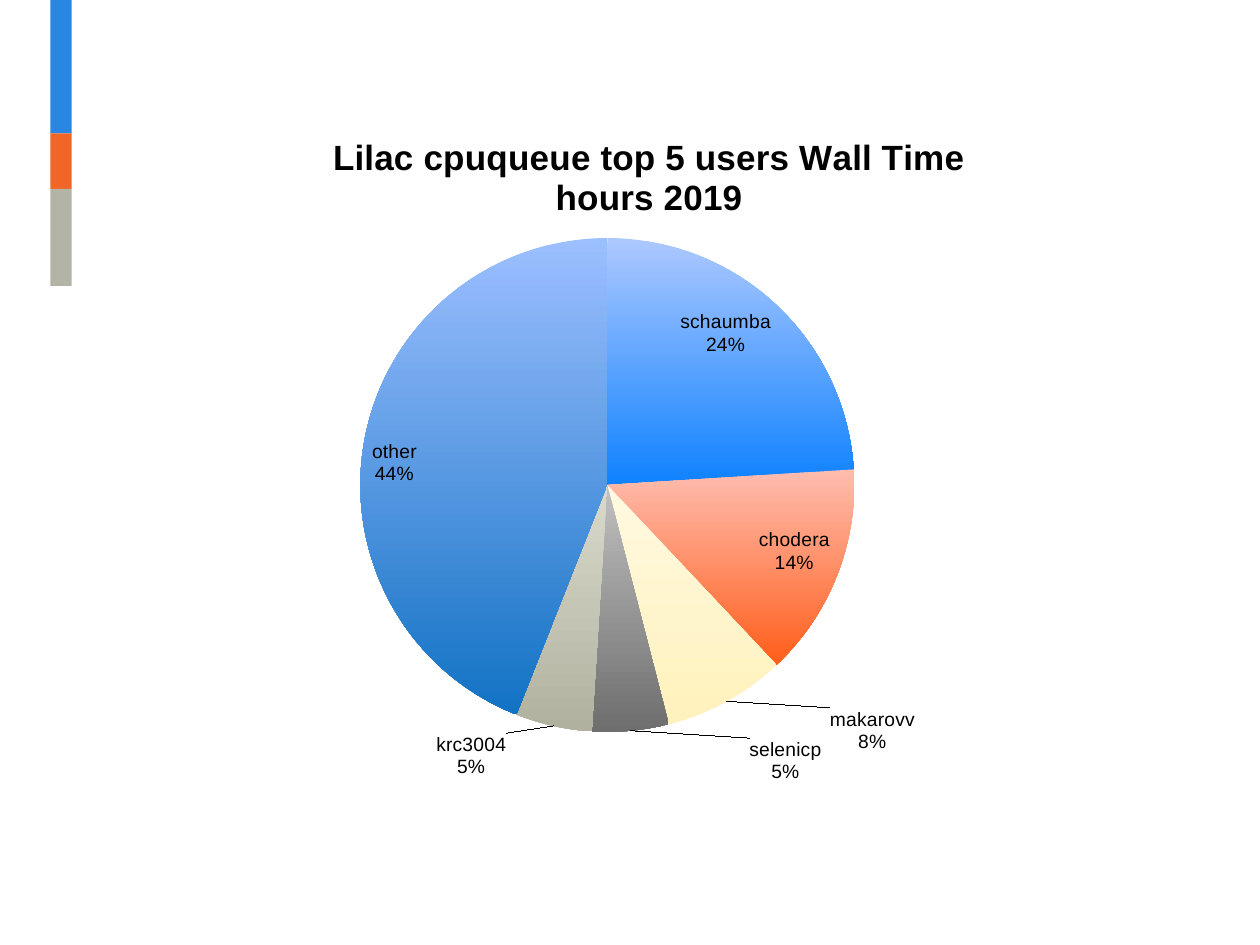
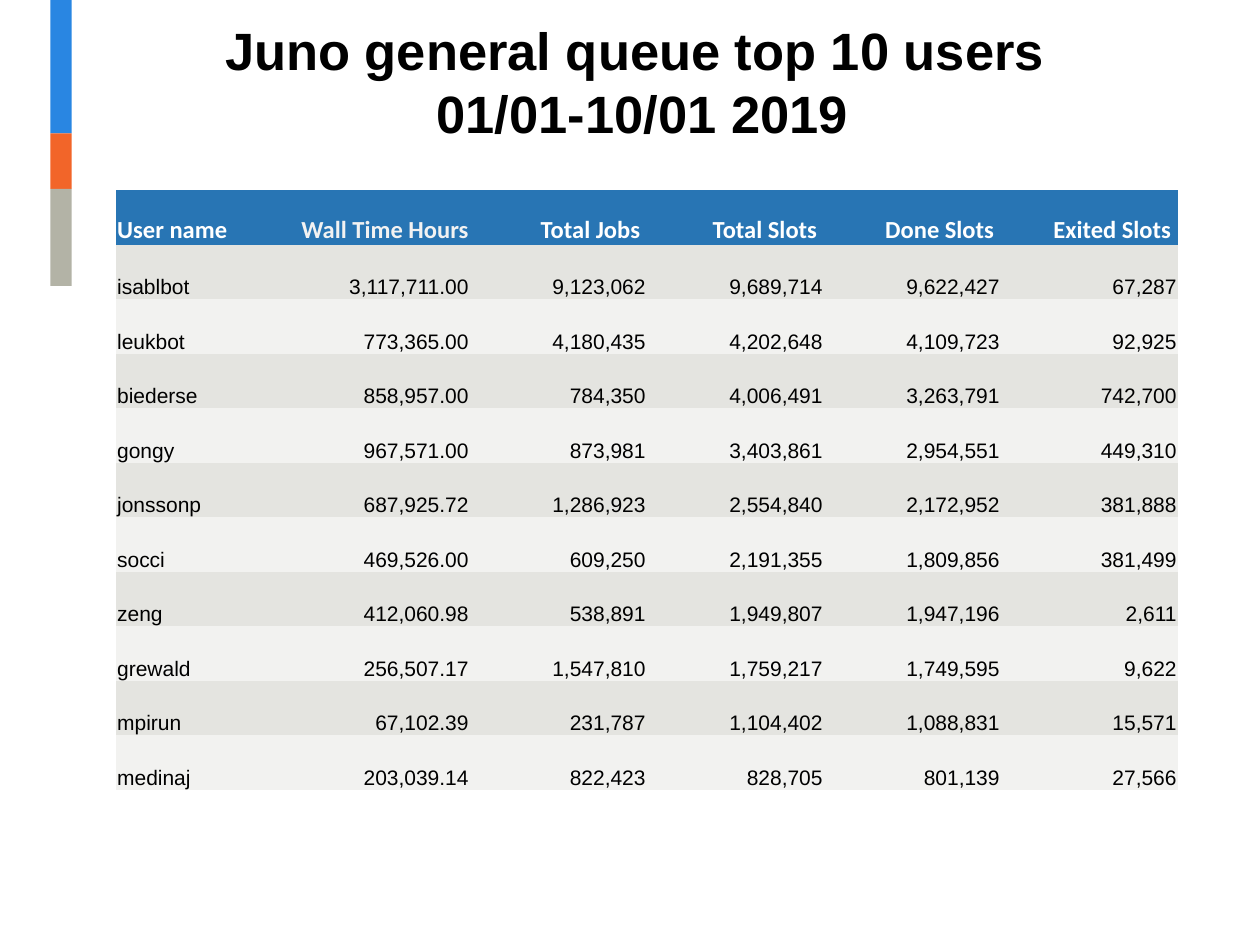
from lxml.etree import SubElement
from pptx import Presentation
from pptx.chart.data import CategoryChartData
from pptx.dml.color import RGBColor
from pptx.enum.chart import XL_CHART_TYPE, XL_LABEL_POSITION as POS
from pptx.enum.shapes import MSO_SHAPE
from pptx.enum.text import MSO_ANCHOR, MSO_AUTO_SIZE, PP_ALIGN
from pptx.oxml import parse_xml
from pptx.oxml.ns import nsdecls, qn
from pptx.util import Inches, Pt

COLORS = {
    "blue": "2986E2", "orange": "F26529", "stone": "B3B3A6",
    "header": "2875B4", "header_soft": "F2F2F2",
    "row_dark": "E4E4E0", "row_light": "F2F2F0",
    "black": "000000", "white": "FFFFFF",
}
TEXT_FONT, HEADER_FONT = "Arial", "Calibri"
PLAIN_TABLE_STYLE = "{2D5ABB26-0587-4C30-8999-92F81FD0307C}"

BAND_LEFT, BAND_WIDTH = 0.4, 0.17
BANDS = [("blue", 1.06), ("orange", 0.44), ("stone", 0.77)]

PIE_TITLE = "Lilac cpuqueue top 5 users Wall Time hours 2019"
# user, percent, gradient top, gradient bottom, label offset (None: inside the slice)
SLICES = [
    ("schaumba", 24, "ADC8FF", "0F82FF", None),
    ("chodera", 14, "FFBDB0", "FF5E1A", None),
    ("makarovv", 8, "FFF9E0", "FFF2BC", (0.11, 0)),
    ("selenicp", 5, "C0C0C0", "6E6E6E", (0.13, 0)),
    ("krc3004", 5, "DADACC", "B1B1A0", (-0.05, 0)),
    ("other", 44, "9CBFFF", "1272C4", None),
]

HEADERS = ["User name", "Wall Time Hours", "Total Jobs ", "Total Slots ",
           "Done Slots ", "Exited Slots "]
USERS = [
    ("isablbot", "3,117,711.00", "9,123,062", "9,689,714", "9,622,427", "67,287"),
    ("leukbot", "773,365.00", "4,180,435", "4,202,648", "4,109,723", "92,925"),
    ("biederse", "858,957.00", "784,350", "4,006,491", "3,263,791", "742,700"),
    ("gongy", "967,571.00", "873,981", "3,403,861", "2,954,551", "449,310"),
    ("jonssonp", "687,925.72", "1,286,923", "2,554,840", "2,172,952", "381,888"),
    ("socci", "469,526.00", "609,250", "2,191,355", "1,809,856", "381,499"),
    ("zeng", "412,060.98", "538,891", "1,949,807", "1,947,196", "2,611"),
    ("grewald", "256,507.17", "1,547,810", "1,759,217", "1,749,595", "9,622"),
    ("mpirun", "67,102.39", "231,787", "1,104,402", "1,088,831", "15,571"),
    ("medinaj", "203,039.14", "822,423", "828,705", "801,139", "27,566"),
]


def rgb(name):
    return RGBColor.from_string(COLORS.get(name, name))


def style(font, size, color="black", bold=False, name=TEXT_FONT):
    font.name, font.size, font.bold = name, Pt(size), bold
    font.color.rgb = rgb(color)


def add_bands(prs, slide):
    """Stack the colour bands and move them to the master, so every slide shows them."""
    top = 0
    for color, height in BANDS:
        sp = slide.shapes.add_shape(MSO_SHAPE.RECTANGLE, Inches(BAND_LEFT), Inches(top),
                                    Inches(BAND_WIDTH), Inches(height))
        sp.shadow.inherit = False
        sp.fill.solid()
        sp.fill.fore_color.rgb = rgb(color)
        sp.line.fill.background()
        prs.slide_master.shapes.element.append(sp.element)
        top += height


def chart_layout(**settings):
    """A manual chart layout; settings are shares of the chart's size."""
    layout = parse_xml(f"<c:layout {nsdecls('c')}><c:manualLayout/></c:layout>")
    for tag, value in settings.items():
        SubElement(layout[0], qn(f"c:{tag}")).set("val", str(value))
    return layout


def label_slices(series):
    for i, (*_, offset) in enumerate(SLICES):
        label = series.points[i].data_label
        label.position = POS.INSIDE_END if offset is None else POS.OUTSIDE_END
        style(label.font, 11)
    labels = series.data_labels
    labels.show_category_name = labels.show_percentage = True
    labels.show_value = False
    for dlbl, (*_, offset) in zip(labels._element.findall(qn("c:dLbl")), SLICES):
        for tag, shown in (("showVal", 0), ("showCatName", 1), ("showPercent", 1)):
            dlbl.find(qn(f"c:{tag}")).set("val", str(shown))
        SubElement(dlbl, qn("c:separator")).text = "\n"
        if offset:
            dlbl.insert(1, chart_layout(x=offset[0], y=offset[1]))


def add_pie(slide, left, top, width, height):
    data = CategoryChartData()
    data.categories = [user for user, *_ in SLICES]
    data.add_series(PIE_TITLE, [percent for _, percent, *_ in SLICES])
    chart = slide.shapes.add_chart(XL_CHART_TYPE.PIE, Inches(left), Inches(top),
                                   Inches(width), Inches(height), data).chart
    chart.has_legend = False
    style(chart.font, 10)

    chart.has_title = True
    title = chart.chart_title
    title.text_frame.text = PIE_TITLE
    style(title.text_frame.paragraphs[0].runs[0].font, 20, bold=True)
    title_el = title._element
    for old in title_el.findall(qn("c:layout")):
        title_el.remove(old)
    title_el.find(qn("c:tx")).addnext(
        chart_layout(xMode="edge", yMode="edge", x=0.15, y=0.04))

    plot = chart.plots[0]
    plot.vary_by_categories = True
    plot_area = plot._element.getparent()
    for old in plot_area.findall(qn("c:layout")):
        plot_area.remove(old)
    plot_area.insert(0, chart_layout(layoutTarget="inner", xMode="edge", yMode="edge",
                                     x=0.187, y=0.196, w=0.543, h=0.705))

    series = plot.series[0]
    for i, (_, _, light, dark, _) in enumerate(SLICES):
        fill = series.points[i].format.fill
        fill.gradient()
        fill.gradient_angle = 270
        for stop, color in zip(fill.gradient_stops, (light, dark)):
            stop.color.rgb = rgb(color)
    label_slices(series)


def set_title(slide, text, left, top, width, height):
    title = slide.shapes.title
    title.left, title.top = Inches(left), Inches(top)
    title.width, title.height = Inches(width), Inches(height)
    tf = title.text_frame
    tf.text = text
    tf.auto_size = MSO_AUTO_SIZE.NONE
    tf.vertical_anchor = MSO_ANCHOR.BOTTOM
    p = tf.paragraphs[0]
    p.alignment = PP_ALIGN.CENTER
    for r in p.runs:
        style(r.font, 30, bold=True)


def add_user_table(slide, left, top, width, height):
    rows = [HEADERS, *USERS]
    table = slide.shapes.add_table(len(rows), len(HEADERS), Inches(left), Inches(top),
                                   Inches(width), Inches(height)).table
    table._tbl.tblPr.find(qn("a:tableStyleId")).text = PLAIN_TABLE_STYLE
    for i, row in enumerate(rows):
        fill = "header" if i == 0 else "row_dark" if i % 2 else "row_light"
        for j, text in enumerate(row):
            cell = table.cell(i, j)
            cell.fill.solid()
            cell.fill.fore_color.rgb = rgb(fill)
            cell.margin_left = cell.margin_right = cell.margin_top = Inches(0.01)
            cell.margin_bottom = 0
            cell.vertical_anchor = MSO_ANCHOR.BOTTOM
            p = cell.text_frame.paragraphs[0]
            p.text = text
            p.alignment = PP_ALIGN.RIGHT if j else PP_ALIGN.LEFT
            font = p.runs[0].font
            if i == 0:
                style(font, 14, "header_soft" if j == 1 else "white", True, HEADER_FONT)
            else:
                style(font, 12)


def main():
    prs = Presentation()
    prs.slide_width, prs.slide_height = Inches(10), Inches(7.5)
    title_only, blank = prs.slide_layouts[5], prs.slide_layouts[6]

    pie_slide = prs.slides.add_slide(blank)
    add_bands(prs, pie_slide)
    add_pie(pie_slide, 1.51, 0.8, 7.22, 5.56)

    table_slide = prs.slides.add_slide(title_only)
    set_title(table_slide, "Juno general queue top 10 users\v 01/01-10/01 2019",
              0.84, 0.33, 8.4, 0.86)
    add_user_table(table_slide, 0.92, 1.51, 8.43, 4.76)

    prs.save("out.pptx")


if __name__ == "__main__":
    main()
